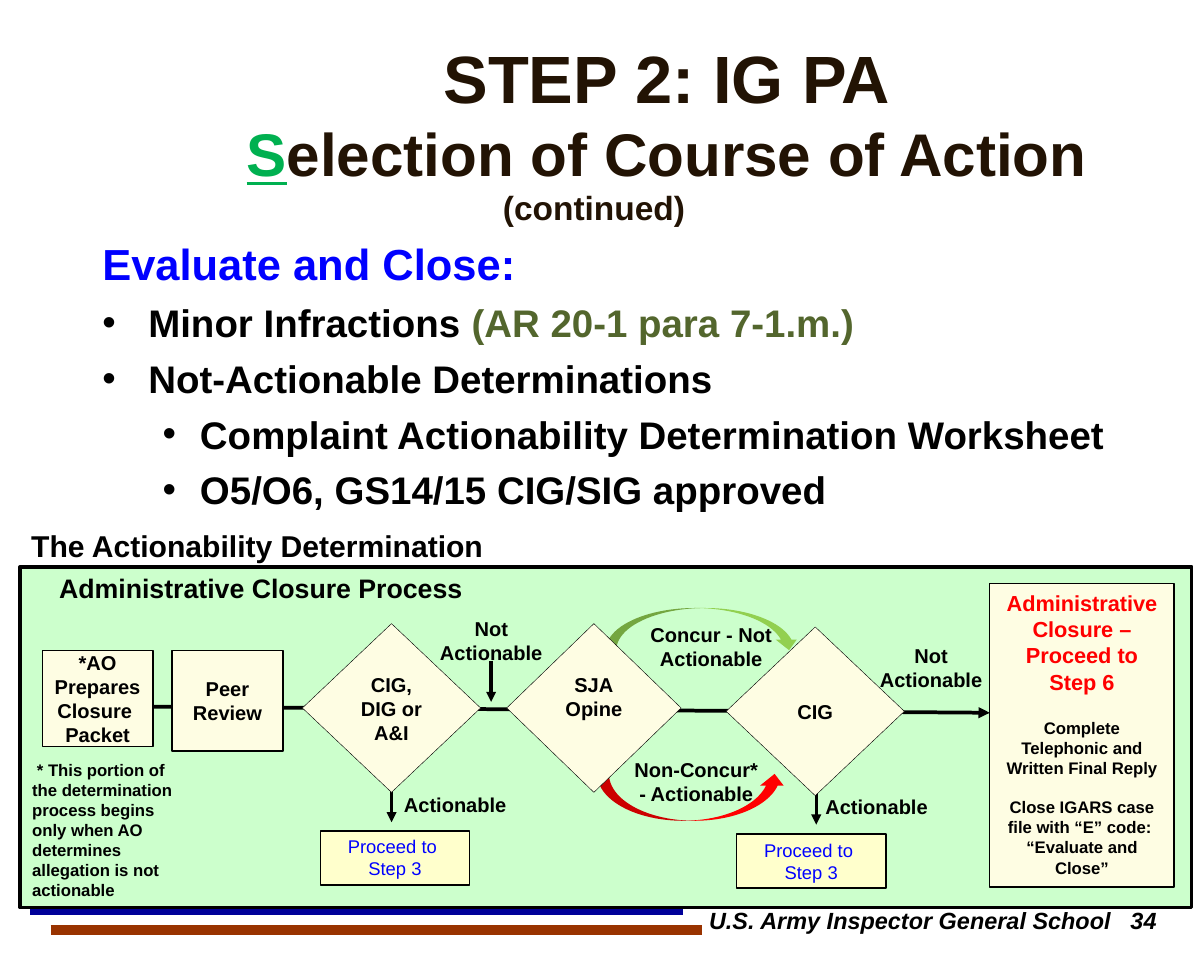
import pptx
import pptx.util
import pptx.dml.color
import pptx.enum.shapes
import pptx.enum.text
import pptx.oxml
import pptx.oxml.ns
from lxml import etree

Cm, Pt = pptx.util.Cm, pptx.util.Pt
SHAPE = pptx.enum.shapes.MSO_SHAPE
ALIGN = pptx.enum.text.PP_ALIGN
ANCHOR = pptx.enum.text.MSO_ANCHOR
qn = pptx.oxml.ns.qn

BLACK, BLUE, RED = "000000", "0000FF", "FF0000"
BROWN, GREEN, OLIVE = "221304", "00B050", "53662D"
CREAM, YELLOW, MINT = "FEFDE3", "FFFFCC", "CCFFCC"


def rgb(color):
    return pptx.dml.color.RGBColor.from_string(color)


def write(sp, text, size=12, color=BLACK, bold=True, italic=False, align=ALIGN.CENTER,
          before=0, margin=0, indent=0, bullet=None, tab=None):
    """Add one paragraph; text is a string or a list of (string, colour, underline)."""
    tf = sp.text_frame
    p = tf.paragraphs[0]
    if p.runs:
        p = tf.add_paragraph()
    p.alignment = align
    p.space_before = Pt(before)
    pPr = p._p.get_or_add_pPr()
    pPr.set("marL", str(Cm(margin)))
    pPr.set("indent", str(Cm(indent)))
    if bullet:
        etree.SubElement(pPr, qn("a:buFont"), typeface="Arial")
        etree.SubElement(pPr, qn("a:buChar"), char=bullet)
    if tab:
        tabs = etree.SubElement(pPr, qn("a:tabLst"))
        etree.SubElement(tabs, qn("a:tab"), pos=str(Cm(tab)), algn="l")
    runs = [(text, color, False)] if isinstance(text, str) else text
    for words, run_color, underline in runs:
        r = p.add_run()
        r.text = words
        r.font.name, r.font.size = "Arial", Pt(size)
        r.font.bold, r.font.italic, r.font.underline = bold, italic, underline
        r.font.color.rgb = rgb(run_color)


def set_frame(sp, anchor, side, top):
    tf = sp.text_frame
    tf.word_wrap = True
    tf.vertical_anchor = anchor
    tf.margin_left = tf.margin_right = Cm(side)
    tf.margin_top = tf.margin_bottom = Cm(top)


def add_text(slide, x, y, w, h, *lines, anchor=ANCHOR.TOP, **fmt):
    sp = slide.shapes.add_textbox(Cm(x), Cm(y), Cm(w), Cm(h))
    set_frame(sp, anchor, 0.25, 0.13)
    for line in lines:
        write(sp, line, **fmt)
    return sp


def add_shape(slide, kind, x, y, w, h, *lines, fill=CREAM, line=0.75,
              anchor=ANCHOR.TOP, side=0.25, top=0.13, **fmt):
    sp = slide.shapes.add_shape(kind, Cm(x), Cm(y), Cm(w), Cm(h))
    sp.shadow.inherit = False
    sp.fill.solid()
    sp.fill.fore_color.rgb = rgb(fill)
    if line:
        sp.line.color.rgb = rgb(BLACK)
        sp.line.width = Pt(line)
    else:
        sp.line.fill.background()
    set_frame(sp, anchor, side, top)
    for words in lines:
        write(sp, words, **fmt)
    return sp


def add_line(slide, x1, y1, x2, y2, color=BLACK, width=2, arrow=True):
    cn = slide.shapes.add_connector(pptx.enum.shapes.MSO_CONNECTOR.STRAIGHT,
                                    Cm(x1), Cm(y1), Cm(x2), Cm(y2))
    cn.line.color.rgb = rgb(color)
    cn.line.width = Pt(width)
    spPr = cn._element.spPr
    if arrow:
        etree.SubElement(spPr.find(qn("a:ln")), qn("a:tailEnd"), type="triangle")
    etree.SubElement(spPr, qn("a:effectLst"))


def add_footer(slide):
    add_line(slide, 0.64, 19.2, 14.4, 19.2, "000099", 6, arrow=False)
    add_line(slide, 1.07, 19.63, 14.81, 19.63, "993300", 6, arrow=False)
    add_text(slide, 14.71, 19, 10.69, 1.35, "U.S. Army Inspector General School\t34",
             size=14, italic=True, align=ALIGN.LEFT, tab=8.92)


def add_heading(slide):
    title = add_text(slide, 4.01, 0.69, 20.12, 3.38, "STEP 2: IG PA",
                     anchor=ANCHOR.MIDDLE, size=40, color=BROWN)
    write(title, [("S", GREEN, True), ("election of Course of Action", BROWN, False)], size=36)
    add_text(slide, 10.36, 3.81, 4.39, 1.12, "(continued)",
             size=20, color=BROWN, align=ALIGN.LEFT)


def add_body(slide):
    body = add_text(slide, 1.91, 4.88, 22.43, 4.29, "Evaluate and Close:",
                    size=26, color=BLUE, align=ALIGN.LEFT)
    infractions = [("Minor Infractions ", BLACK, False),
                   ("(AR 20-1 para 7-1.m.)", OLIVE, False)]
    for words, margin, indent in [
            (infractions, 0.97, -0.97),
            ("Not-Actionable Determinations", 0.97, -0.97),
            ("Complaint Actionability Determination Worksheet", 2.06, -0.79),
            ("O5/O6, GS14/15 CIG/SIG approved", 2.06, -0.79)]:
        write(body, words, size=23, align=ALIGN.LEFT, before=5.75,
              margin=margin, indent=indent, bullet="•")


def add_closure_box(slide):
    sp = add_shape(slide, SHAPE.RECTANGLE, 20.88, 12.32, 3.89, 6.4,
                   "Administrative Closure – Proceed to Step 6", size=13, color=RED)
    write(sp, "Complete Telephonic and Written Final Reply", size=10, before=13.8)
    write(sp, "Close IGARS case file with “E” code: ", size=10, before=11.5)
    write(sp, "“Evaluate and Close”", size=10)


def add_process(slide):
    # Panel and its headings
    panel = add_shape(slide, SHAPE.RECTANGLE, 0.43, 11.96, 24.71, 7.19,
                      "Administrative Closure Process", fill=MINT, line=2.25,
                      top=0.1, size=16, align=ALIGN.LEFT)
    panel.text_frame.margin_left = Cm(0.82)
    add_text(slide, 0.41, 11, 10.62, 1.02, "The Actionability Determination",
             size=18, align=ALIGN.LEFT)

    # Main flow, from first box to closure
    add_line(slide, 2.9, 14.91, 20.88, 15.04, width=2.25)
    for x, h, lines in [(0.89, 2.03, ("*AO Prepares", "Closure ", "Packet")),
                        (3.63, 2.13, ("Peer", "Review"))]:
        add_shape(slide, SHAPE.RECTANGLE, x, 13.72, 2.34, h, *lines,
                  anchor=ANCHOR.MIDDLE, side=0)
    add_closure_box(slide)

    # Labels and curved arrows between the decisions
    add_text(slide, 9.02, 12.88, 2.69, 1.27, "Not Actionable")
    add_text(slide, 13.39, 13, 3.23, 1.27, "Concur - Not Actionable")
    add_shape(slide, SHAPE.CURVED_DOWN_ARROW, 12.78, 12.83, 4.09, 0.89,
              fill="92D050", line=None)
    add_shape(slide, SHAPE.CURVED_UP_ARROW, 12.6, 16.33, 3.99, 0.99, fill=RED, line=None)
    add_text(slide, 13.13, 15.85, 3.12, 1.27, "Non-Concur* - Actionable")
    add_text(slide, 18.03, 13.44, 3.23, 1.27, "Not Actionable")
    add_line(slide, 10.36, 13.94, 10.36, 14.81)

    # Actionable branches down to step 3
    for arrow_x, arrow_y, label_x, label_y, box_x, box_y in [
            (8.26, 16.38, 8.26, 16.59, 6.76, 17.53),
            (17.22, 16.43, 17.15, 16.64, 15.54, 17.6)]:
        add_line(slide, arrow_x, arrow_y, arrow_x, arrow_y + 0.97)
        add_text(slide, label_x, label_y, 2.69, 0.76, "Actionable")
        add_shape(slide, SHAPE.RECTANGLE, box_x, box_y, 3.15, 1.14,
                  "Proceed to ", "Step 3", fill=YELLOW, line=1, side=0.2, top=0.1,
                  size=11, color=BLUE, bold=False)

    # Decisions
    for x, y, w, anchor, lines in [
            (10.69, 13.16, 3.68, ANCHOR.TOP, ("SJA", "Opine")),
            (6.38, 13.16, 3.76, ANCHOR.TOP, ("CIG, DIG or", "A&I")),
            (15.32, 13.23, 3.76, ANCHOR.MIDDLE, ("CIG",))]:
        add_shape(slide, SHAPE.FLOWCHART_DECISION, x, y, w, 3.56, *lines,
                  line=0.25, anchor=anchor)

    # Footnote
    add_text(slide, 0.43, 15.9, 3.71, 3.25,
             "* This portion of the determination process begins only when AO "
             "determines allegation is not actionable",
             size=10, align=ALIGN.LEFT, indent=0.1)


def main():
    prs = pptx.Presentation()
    prs.slide_width, prs.slide_height = Cm(25.4), Cm(20.32)
    slide = prs.slides.add_slide(prs.slide_layouts[6])
    add_footer(slide)
    add_heading(slide)
    add_body(slide)
    add_process(slide)
    prs.save("out.pptx")


if __name__ == "__main__":
    main()
